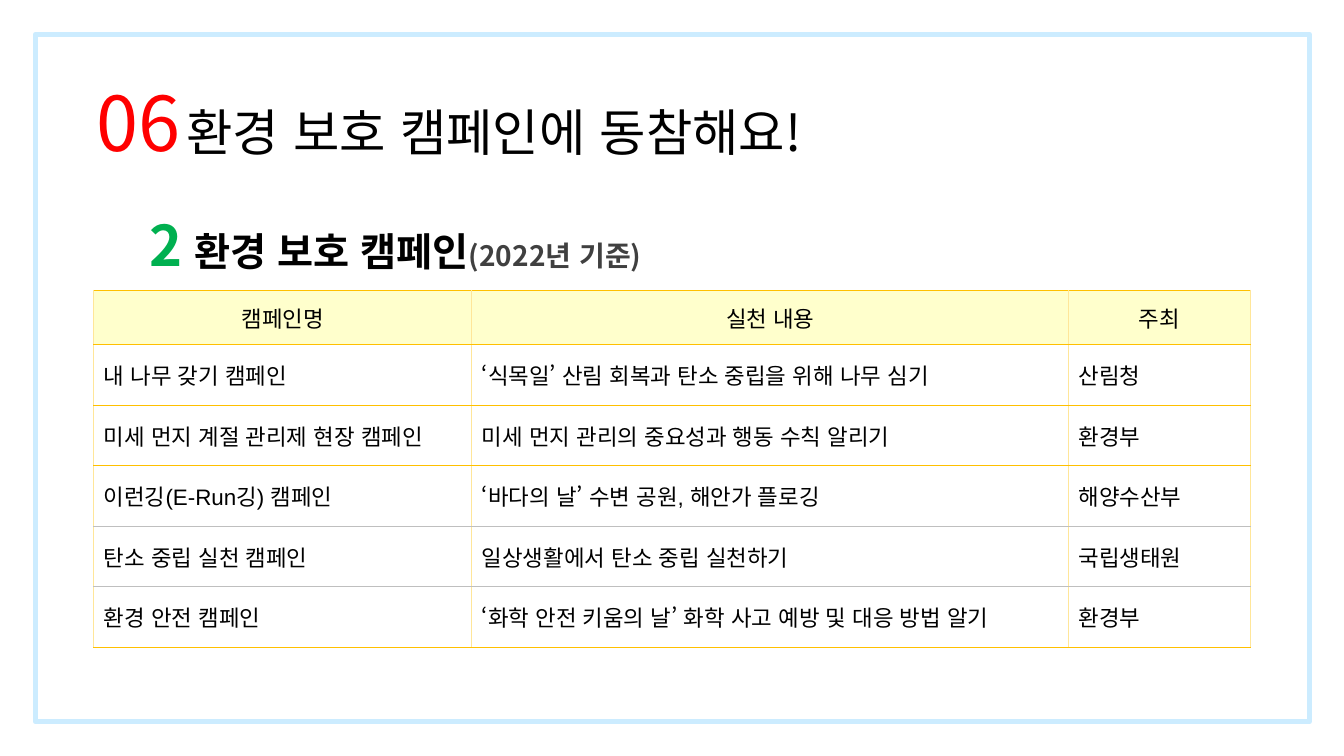
from lxml.etree import SubElement
from pptx import Presentation
from pptx.dml.color import RGBColor
from pptx.enum.lang import MSO_LANGUAGE_ID
from pptx.enum.shapes import MSO_SHAPE
from pptx.enum.text import MSO_ANCHOR, MSO_AUTO_SIZE, PP_ALIGN
from pptx.oxml.ns import qn
from pptx.util import Inches, Pt

RED = RGBColor(0xFF, 0x00, 0x00)
GREEN = RGBColor(0x00, 0xB0, 0x50)
BLACK = RGBColor(0x00, 0x00, 0x00)
DARK = RGBColor(0x40, 0x40, 0x40)
WHITE = RGBColor(0xFF, 0xFF, 0xFF)
SKY = RGBColor(0xCC, 0xEC, 0xFF)
CREAM = RGBColor(0xFF, 0xFF, 0xCC)
SAND = RGBColor(0xFF, 0xE6, 0x99)
GOLD = RGBColor(0xFF, 0xC0, 0x00)
GREY = RGBColor(0xBF, 0xBF, 0xBF)

ROWS = [
    ("캠페인명", "실천 내용", "주최"),
    ("내 나무 갖기 캠페인", "‘식목일’ 산림 회복과 탄소 중립을 위해 나무 심기", "산림청"),
    ("미세 먼지 계절 관리제 현장 캠페인", "미세 먼지 관리의 중요성과 행동 수칙 알리기", "환경부"),
    ("이런깅(E-Run깅) 캠페인", "‘바다의 날’ 수변 공원, 해안가 플로깅", "해양수산부"),
    ("탄소 중립 실천 캠페인", "일상생활에서 탄소 중립 실천하기", "국립생태원"),
    ("환경 안전 캠페인", "‘화학 안전 키움의 날’ 화학 사고 예방 및 대응 방법 알기", "환경부"),
]
WIDTHS = (3.75, 5.92, 1.8)
HEIGHTS = (0.54,) + (0.6,) * 5
RULES = (GOLD, GOLD, GOLD, GOLD, GREY, GREY, GOLD)


def write(para, text, size=16, color=BLACK, bold=False, face="Noto Sans CJK KR"):
    run = para.add_run()
    run.text = text
    font = run.font
    font.size, font.bold, font.name = Pt(size), bold, face
    font.color.rgb = color
    font.language_id = MSO_LANGUAGE_ID.KOREAN
    east = SubElement(run._r.rPr, qn("a:ea"))
    east.set("typeface", "Noto Sans CJK KR")


def edge(cell, side, color, width):
    line = SubElement(cell._tc.get_or_add_tcPr(), qn(f"a:ln{side}"))
    line.set("w", str(Pt(width)))
    fill = SubElement(line, qn("a:solidFill"))
    SubElement(fill, qn("a:srgbClr")).set("val", str(color))


class Deck:
    def __init__(self):
        self.show = Presentation()
        self.show.slide_width = Inches(13.33)
        self.show.slide_height = Inches(7.5)
        self.slide = self.show.slides.add_slide(self.show.slide_layouts[5])
        self.shapes = self.slide.shapes

    def fill(self, shape, box, parts, anchor, align, space=None):
        shape.left, shape.top, shape.width, shape.height = map(Inches, box)
        frame = shape.text_frame
        frame.word_wrap = True
        frame.auto_size = MSO_AUTO_SIZE.SHAPE_TO_FIT_TEXT
        frame.vertical_anchor = anchor
        para = frame.paragraphs[0]
        para.alignment = align
        para.line_spacing = space
        for text, style in parts:
            write(para, text, **style)

    def title(self, box, parts):
        self.fill(self.shapes.title, box, parts, MSO_ANCHOR.TOP, PP_ALIGN.LEFT)

    def label(self, box, parts):
        shape = self.shapes.add_textbox(*map(Inches, box))
        self.fill(shape, box, parts, MSO_ANCHOR.MIDDLE, PP_ALIGN.JUSTIFY, 1.5)

    def frame(self, box):
        shape = self.shapes.add_shape(MSO_SHAPE.RECTANGLE, *map(Inches, box))
        shape.shadow.inherit = False
        shape.fill.background()
        shape.line.color.rgb = SKY
        shape.line.width = Pt(3.25)

    def table(self, left, top):
        size = map(Inches, (left, top, sum(WIDTHS), sum(HEIGHTS)))
        grid = self.shapes.add_table(len(ROWS), len(WIDTHS), *size).table
        grid.first_row = grid.horz_banding = False
        for col, width in zip(grid.columns, WIDTHS):
            col.width = Inches(width)
        for i, (row, height) in enumerate(zip(grid.rows, HEIGHTS)):
            row.height = Inches(height)
            for cell, text in zip(row.cells, ROWS[i]):
                cell.vertical_anchor = MSO_ANCHOR.MIDDLE
                para = cell.text_frame.paragraphs[0]
                para.alignment = PP_ALIGN.LEFT if i else PP_ALIGN.CENTER
                write(para, text, face="Arial")
                edge(cell, "L", SAND, 1)
                edge(cell, "R", SAND, 1)
                edge(cell, "T", RULES[i], 0.5)
                edge(cell, "B", RULES[i + 1], 0.5)
                cell.fill.solid()
                cell.fill.fore_color.rgb = WHITE if i else CREAM


def main():
    deck = Deck()
    deck.frame((0.35, 0.34, 12.64, 6.82))
    deck.title((0.86, 0.7, 11.25, 1.01), [
        ("06", dict(size=54, color=RED)),
        (" ", dict(size=18)),
        ("환경 보호 캠페인에 동참해요!", dict(size=36)),
    ])
    deck.label((1.38, 1.75, 6.6, 1.01), [
        ("2 ", dict(size=40, color=GREEN, bold=True)),
        ("환경 보호 캠페인", dict(size=28, bold=True)),
        ("(2022년 기준)", dict(size=20, color=DARK, bold=True)),
    ])
    deck.table(0.93, 2.88)
    deck.show.save("out.pptx")


if __name__ == "__main__":
    main()
